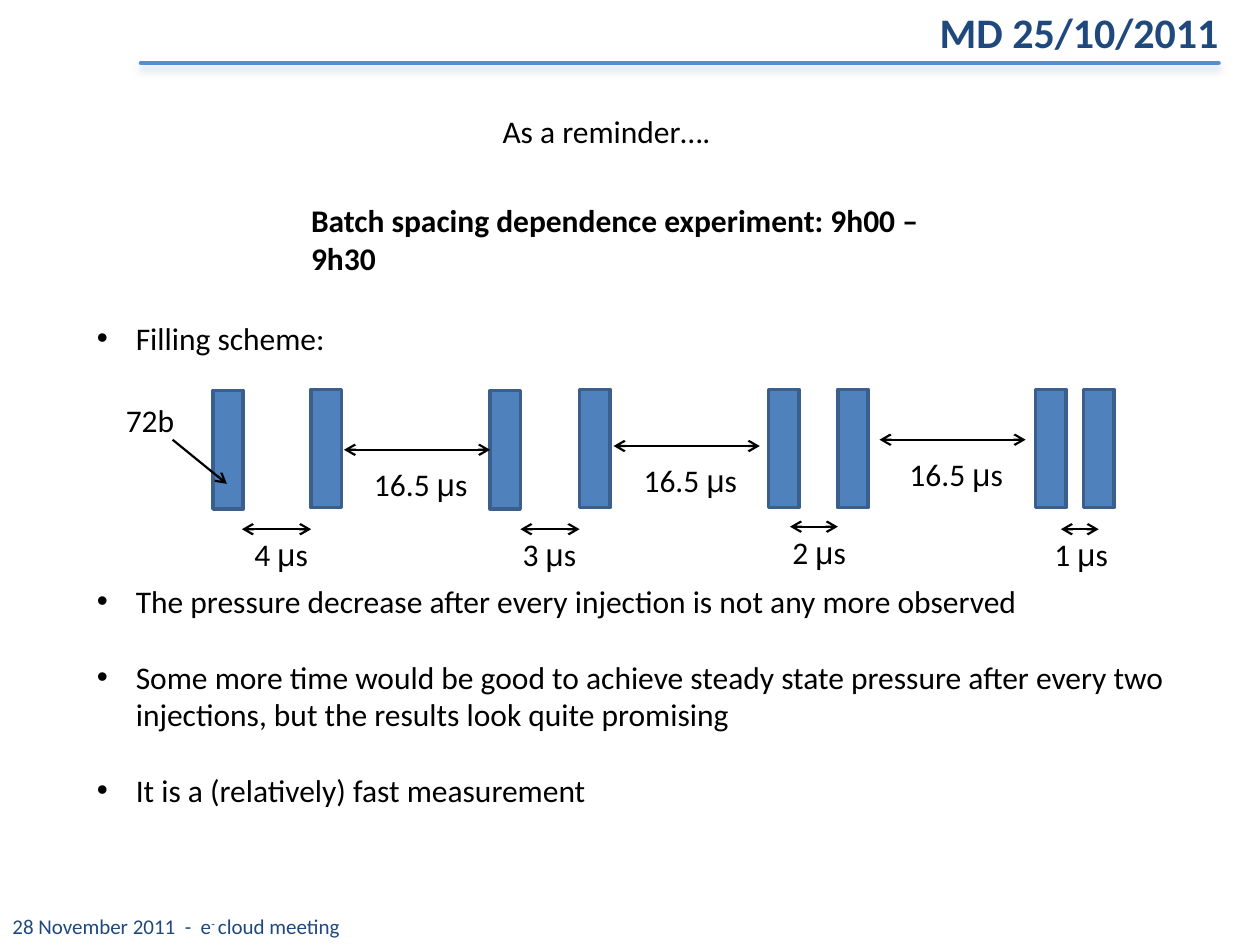
"""Build the batch spacing slide with its filling scheme diagram."""
from lxml import etree
from pptx import Presentation
from pptx.dml.color import RGBColor
from pptx.enum.shapes import MSO_CONNECTOR, MSO_SHAPE
from pptx.oxml.ns import qn
from pptx.util import Inches, Pt

STRAIGHT = MSO_CONNECTOR.STRAIGHT
RECTANGLE = MSO_SHAPE.RECTANGLE
BLACK = RGBColor(0x00, 0x00, 0x00)
NAVY = RGBColor(0x1F, 0x49, 0x7D)
RULE_BLUE = RGBColor(0x55, 0x8E, 0xD5)
BATCH_FILL = RGBColor(0x4F, 0x81, 0xBD)
BATCH_LINE = RGBColor(0x3A, 0x5F, 0x8C)

deck = Presentation()
deck.slide_width = Inches(10)
deck.slide_height = Inches(7.5)
page = deck.slides.add_slide(deck.slide_layouts[6])


def add_label(left, top, width, height, pieces, size=18, color=BLACK, bold=False):
    box = page.shapes.add_textbox(Inches(left), Inches(top), Inches(width), Inches(height))
    box.text_frame.word_wrap = False
    para = box.text_frame.paragraphs[0]
    for piece in pieces:
        span = para.add_run()
        span.text = piece
        span.font.name = "Arial" if piece == "μ" else "Calibri"
        span.font.size = Pt(size)
        span.font.bold = bold
        span.font.color.rgb = color
    return box


def add_line(start, end, color=BLACK, width=1.25, arrow_ends=()):
    line = page.shapes.add_connector(STRAIGHT, *[Inches(value) for value in start + end])
    line.line.color.rgb = color
    line.line.width = Pt(width)
    properties = line._element.spPr
    stroke = properties.find(qn("a:ln"))
    for arrow_end in arrow_ends:
        etree.SubElement(stroke, qn(f"a:{arrow_end}"), type="arrow")
    return stroke, etree.SubElement(properties, qn("a:effectLst"))


stroke, effects = add_line((1.12, 0.5), (9.67, 0.5), RULE_BLUE, 2.75)
stroke.set("cap", "rnd")
shadow = etree.SubElement(effects, qn("a:outerShdw"), blurRad=str(Pt(4)),
                          dist=str(Pt(3)), dir="5400000", rotWithShape="0")
shadow_color = etree.SubElement(shadow, qn("a:srgbClr"), val="95B3D7")
etree.SubElement(shadow_color, qn("a:alpha"), val="40000")

add_label(2.37, 1.55, 5.59, 0.4, ["Batch spacing dependence experiment: 9h00 – 9h30"], bold=True)

BULLETS = [
    ("Filling scheme:", 0),
    ("The pressure decrease after every injection is not any more observed", 129),
    ("Some more time would be good to achieve steady state pressure after every two "
     "injections, but the results look quite promising", 21.5),
    ("It is a (relatively) fast measurement", 21.5),
]
body = page.shapes.add_textbox(Inches(0.67), Inches(2.48), Inches(8.74), Inches(4.34)).text_frame
body.word_wrap = True
for index, (text, gap) in enumerate(BULLETS):
    para = body.add_paragraph() if index else body.paragraphs[0]
    para.text = text
    if gap:
        para.space_before = Pt(gap)
    properties = para._p.get_or_add_pPr()
    properties.set("marL", str(Inches(0.31)))
    properties.set("indent", str(Inches(-0.31)))
    etree.SubElement(properties, qn("a:buFont"), typeface="Arial")
    etree.SubElement(properties, qn("a:buChar"), char="•")
    span = para.runs[0]
    span.font.name = "Calibri"
    span.font.size = Pt(18)
    span.font.color.rgb = BLACK

BATCHES = [(1.69, 3.1), (2.47, 3.09), (3.89, 3.1), (4.6, 3.09),
           (6.1, 3.09), (6.65, 3.09), (8.22, 3.09), (8.6, 3.09)]
for left, top in BATCHES:
    batch = page.shapes.add_shape(RECTANGLE, Inches(left), Inches(top), Inches(0.24), Inches(0.94))
    batch.shadow.inherit = False
    batch.fill.solid()
    batch.fill.fore_color.rgb = BATCH_FILL
    batch.line.color.rgb = BATCH_LINE
    batch.line.width = Pt(2)

SHORT_SPACINGS = [("4 ", 1.92, 2.47, 4.2, 1.92), ("3 ", 4.13, 4.6, 4.2, 4.05),
                  ("2 ", 6.27, 6.65, 4.18, 6.19), ("1 ", 8.42, 8.72, 4.2, 8.27)]
for number, start, end, top, label_left in SHORT_SPACINGS:
    add_line((start, top), (end, top), arrow_ends=("headEnd", "tailEnd"))
    add_label(label_left, top, 0.67, 0.4, [number, "μ", "s"])

for left, top in [(2.73, 3.57), (4.87, 3.54), (6.98, 3.49)]:
    add_line((left, top), (left + 1.16, top), arrow_ends=("headEnd", "tailEnd"))
    add_label(left + 0.14, top + 0.07, 0.94, 0.4, ["16.5 ", "μ", "s"])

add_label(0.9, 3.13, 0.63, 0.4, ["72b"])
add_line((1.37, 3.49), (1.8, 3.84), arrow_ends=("tailEnd",))

add_label(7.36, 0, 2.44, 0.5, ["MD 25/10/2011"], 24, NAVY, True)
footer = add_label(0, 7.2, 9.42, 0.3, ["28 November 2011  -  e", "- ", "cloud meeting"], 12, NAVY)
footer.text_frame.word_wrap = True
superscript = footer.text_frame.paragraphs[0].runs[1]
superscript._r.get_or_add_rPr().set("baseline", "30000")
add_label(3.89, 0.84, 1.9, 0.4, ["As a reminder…."])

deck.save("out.pptx")
